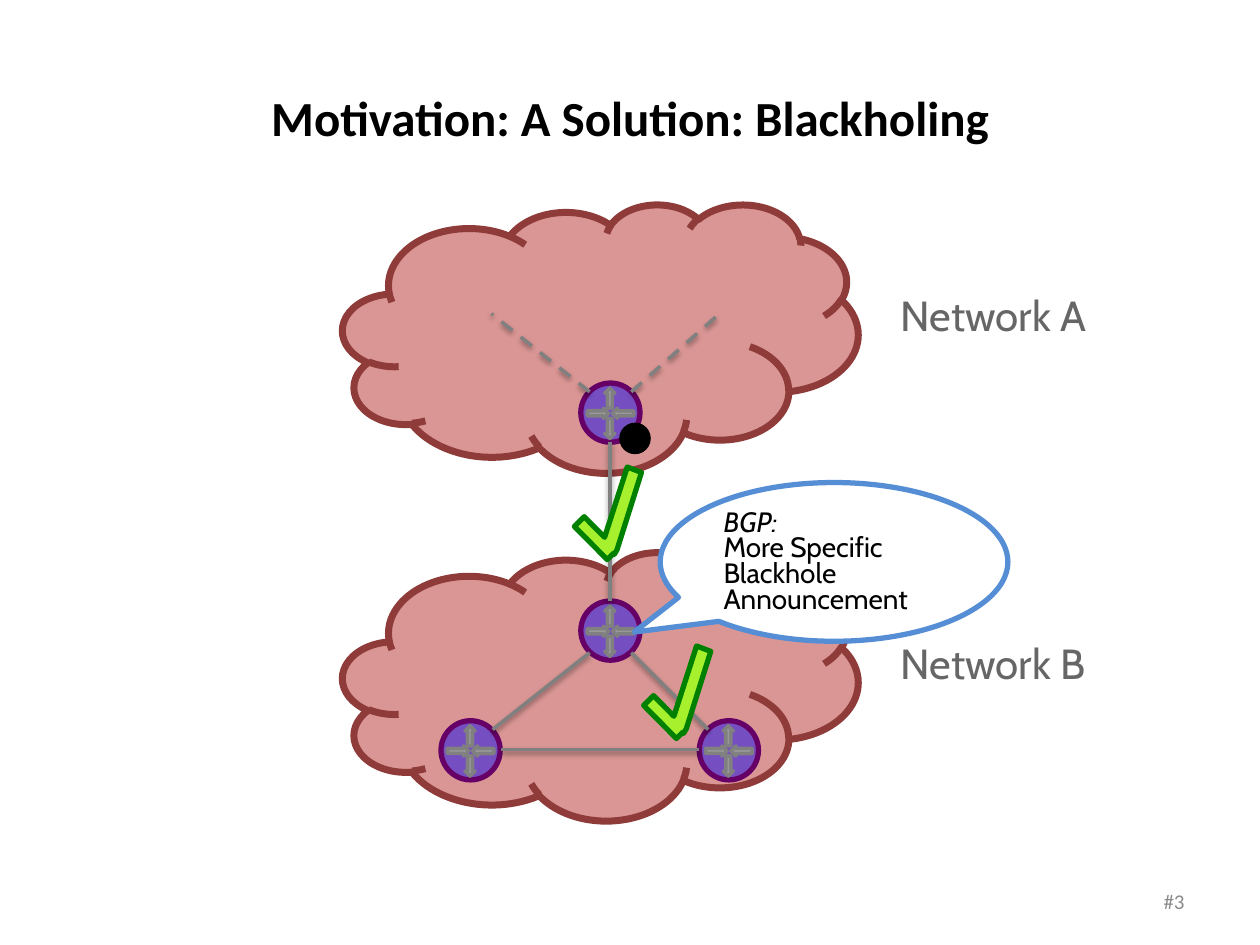
import dataclasses
import typing

import lxml.etree
import pptx
import pptx.dml.color
import pptx.enum.dml
import pptx.enum.shapes
import pptx.enum.text
import pptx.oxml.ns
import pptx.util

Inches = pptx.util.Inches
Kind = pptx.enum.shapes.MSO_SHAPE
Align = pptx.enum.text.PP_ALIGN
Anchor = pptx.enum.text.MSO_ANCHOR


@dataclasses.dataclass(frozen=True)
class Theme:
    heading_font: str = "Calibri"
    label_font: str = "Cabin"
    title_size: float = 28
    label_size: float = 24
    callout_size: float = 16
    number_size: float = 12
    black: str = "000000"
    white: str = "FFFFFF"
    label: str = "666666"
    number: str = "8C8C8C"
    cloud: str = "D99694"
    cloud_edge: str = "8E3B39"
    router: str = "754EC2"
    router_edge: str = "660066"
    arrow: str = "999999"
    link: str = "808080"
    callout_edge: str = "558ED5"
    check: str = "A6F02D"
    check_edge: str = "008000"


THEME = Theme()


class Point(typing.NamedTuple):
    x: float
    y: float


class Frame(typing.NamedTuple):
    left: float
    top: float
    width: float
    height: float


class Network(typing.NamedTuple):
    name: str
    cloud_top: float
    label_top: float


class Link(typing.NamedTuple):
    start: Point
    end: Point
    dashed: bool = False


class Arrow(typing.NamedTuple):
    left: float
    top: float
    width: float
    rotation: float


NETWORKS = [Network("Network A", 1.62, 2.25), Network("Network B", 4.38, 5.01)]
ROUTERS = [Point(4.61, 3.04), Point(4.61, 4.77), Point(3.5, 5.72), Point(5.55, 5.72)]
ROUTER_SIZE = 0.47
ARROWS = [
    Arrow(0.05, 0.2, 0.17, 0),
    Arrow(0.25, 0.2, 0.17, 180),
    Arrow(0.15, 0.32, 0.16, 90),
    Arrow(0.15, 0.08, 0.16, 270),
]
LINKS = [
    Link(Point(4.68, 5.18), Point(3.91, 5.79)),
    Link(Point(5.01, 5.18), Point(5.62, 5.79)),
    Link(Point(5.55, 5.95), Point(3.98, 5.95)),
    Link(Point(4.84, 4.77), Point(4.84, 3.51)),
    Link(Point(4.68, 3.11), Point(3.9, 2.49), True),
    Link(Point(5.01, 3.11), Point(5.71, 2.49), True),
]
CHECKS = [Point(4.71, 3.72), Point(5.26, 5.14)]
CHECK_OUTLINE = [
    Point(0, 0.05), Point(0.27, 0.57), Point(0.04, 0.57), Point(0.04, 0.68),
    Point(0.41, 0.68), Point(0.41, 0.61), Point(0.42, 0.61), Point(0.41, 0.57),
    Point(0.11, 0),
]


def rgb(value: str) -> pptx.dml.color.RGBColor:
    return pptx.dml.color.RGBColor.from_string(value)


def paint(shape, fill: str, edge: str, width: float) -> None:
    shape.shadow.inherit = False
    shape.fill.solid()
    shape.fill.fore_color.rgb = rgb(fill)
    shape.line.color.rgb = rgb(edge)
    shape.line.width = pptx.util.Pt(width)


def add_figure(shapes, kind, frame: Frame, fill: str, edge: str, width: float):
    shape = shapes.add_shape(kind, *map(Inches, frame))
    paint(shape, fill, edge, width)
    return shape


def style(para, font: str, size: float, color: str) -> None:
    para.font.name = font
    para.font.size = pptx.util.Pt(size)
    para.font.color.rgb = rgb(color)


def add_text(shapes, frame: Frame, text: str, font: str, size: float, color: str,
             align=Align.LEFT, anchor=Anchor.TOP, wrap: bool = True):
    box = shapes.add_textbox(*map(Inches, frame))
    box.text_frame.word_wrap = wrap
    box.text_frame.vertical_anchor = anchor
    para = box.text_frame.paragraphs[0]
    para.text = text
    para.alignment = align
    style(para, font, size, color)
    return para


def add_network(shapes, network: Network) -> None:
    add_figure(shapes, Kind.CLOUD, Frame(2.72, network.cloud_top, 4.09, 2.13),
               THEME.cloud, THEME.cloud_edge, 4)
    add_text(shapes, Frame(7.05, network.label_top, 1.9, 0.5), network.name,
             THEME.label_font, THEME.label_size, THEME.label, wrap=False)


def add_router(shapes, corner: Point) -> None:
    group = shapes.add_group_shape()
    add_figure(group.shapes, Kind.OVAL, Frame(*corner, ROUTER_SIZE, ROUTER_SIZE),
               THEME.router, THEME.router_edge, 3)
    for arrow in ARROWS:
        frame = Frame(corner.x + arrow.left, corner.y + arrow.top, arrow.width, 0.08)
        shape = add_figure(group.shapes, Kind.RIGHT_ARROW, frame, THEME.arrow, THEME.link, 2)
        shape.rotation = arrow.rotation


def add_link(shapes, link: Link) -> None:
    line = shapes.add_connector(pptx.enum.shapes.MSO_CONNECTOR.STRAIGHT,
                                *map(Inches, (*link.start, *link.end)))
    line.line.color.rgb = rgb(THEME.link)
    line.line.width = pptx.util.Pt(2)
    if link.dashed:
        line.line.dash_style = pptx.enum.dml.MSO_LINE.DASH
    qn = pptx.oxml.ns.qn
    effects = lxml.etree.SubElement(line._element.spPr, qn("a:effectLst"))
    shadow = lxml.etree.SubElement(
        effects, qn("a:outerShdw"), blurRad=str(pptx.util.Pt(3.1)),
        dist=str(pptx.util.Pt(1.6)), dir="5400000", rotWithShape="0")
    color = lxml.etree.SubElement(shadow, qn("a:srgbClr"), val=THEME.black)
    lxml.etree.SubElement(color, qn("a:alpha"), val="38000")


def add_callout(shapes) -> None:
    callout = add_figure(shapes, Kind.OVAL_CALLOUT, Frame(5.24, 3.83, 2.76, 1.26),
                         THEME.white, THEME.callout_edge, 3)
    callout.adjustments[0] = -0.575
    callout.adjustments[1] = 0.442
    frame = callout.text_frame
    frame.word_wrap = True
    frame.vertical_anchor = Anchor.TOP
    frame.text = "BGP:\nMore Specific Blackhole Announcement"
    for para in frame.paragraphs:
        para.alignment = Align.LEFT
        para.line_spacing = 0.76
        style(para, THEME.label_font, THEME.callout_size, THEME.black)
    frame.paragraphs[0].font.italic = True


def add_check(shapes, corner: Point) -> None:
    outline = [(Inches(corner.x + point.x), Inches(corner.y + point.y))
               for point in CHECK_OUTLINE]
    builder = shapes.build_freeform(*outline[0])
    builder.add_line_segments(outline[1:], close=True)
    check = builder.convert_to_shape()
    paint(check, THEME.check, THEME.check_edge, 3)
    check.rotation = 45.3


def main() -> None:
    deck = pptx.Presentation()
    deck.slide_width, deck.slide_height = Inches(10), Inches(7.5)
    shapes = deck.slides.add_slide(deck.slide_layouts[6]).shapes

    title = add_text(shapes, Frame(0.5, 0.3, 9, 1.25), "Motivation: A Solution: Blackholing",
                     THEME.heading_font, THEME.title_size, THEME.black,
                     Align.CENTER, Anchor.MIDDLE)
    title.font.bold = True
    add_text(shapes, Frame(7.17, 6.95, 2.33, 0.4), "#3", THEME.heading_font,
             THEME.number_size, THEME.number, Align.RIGHT, Anchor.MIDDLE)
    for network in NETWORKS:
        add_network(shapes, network)
    for corner in ROUTERS:
        add_router(shapes, corner)
    for link in LINKS:
        add_link(shapes, link)
    add_callout(shapes)
    add_figure(shapes, Kind.OVAL, Frame(4.92, 3.36, 0.24, 0.24), THEME.black, THEME.black, 0.75)
    for corner in CHECKS:
        add_check(shapes, corner)
    deck.save("out.pptx")


if __name__ == "__main__":
    main()
